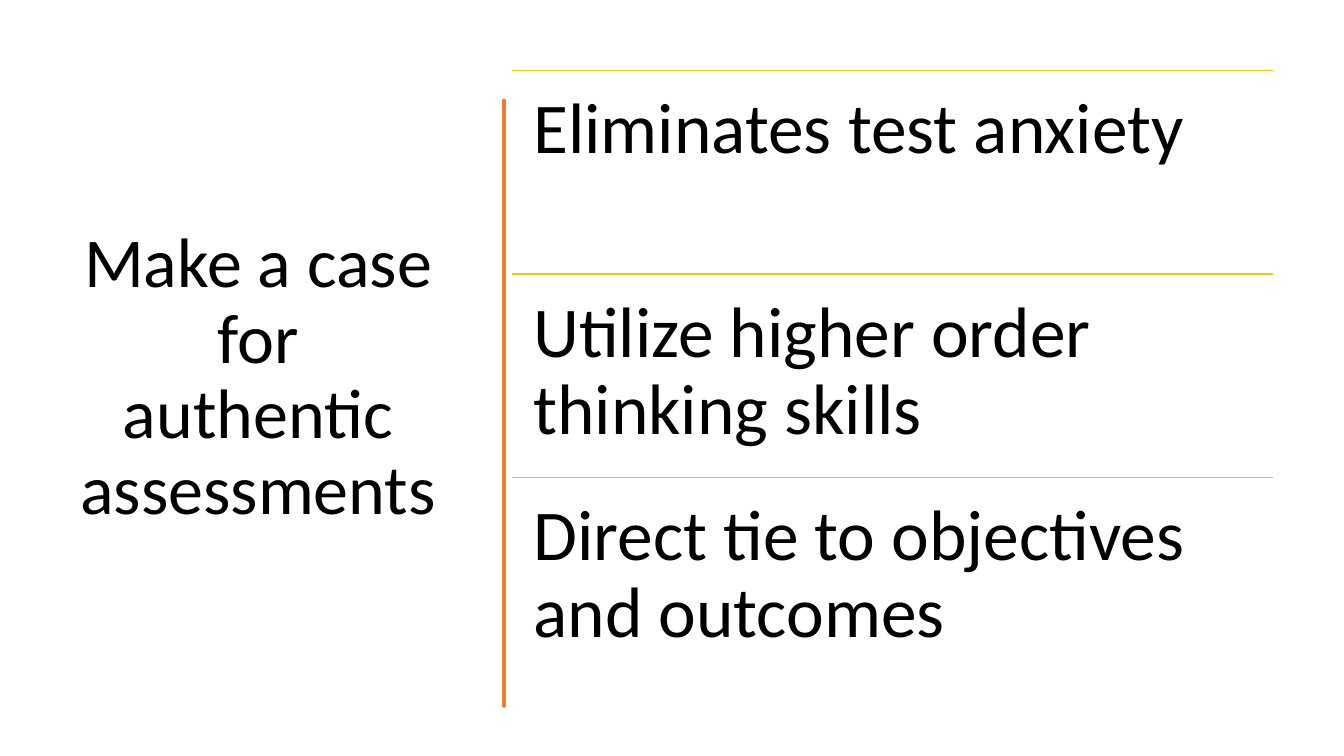
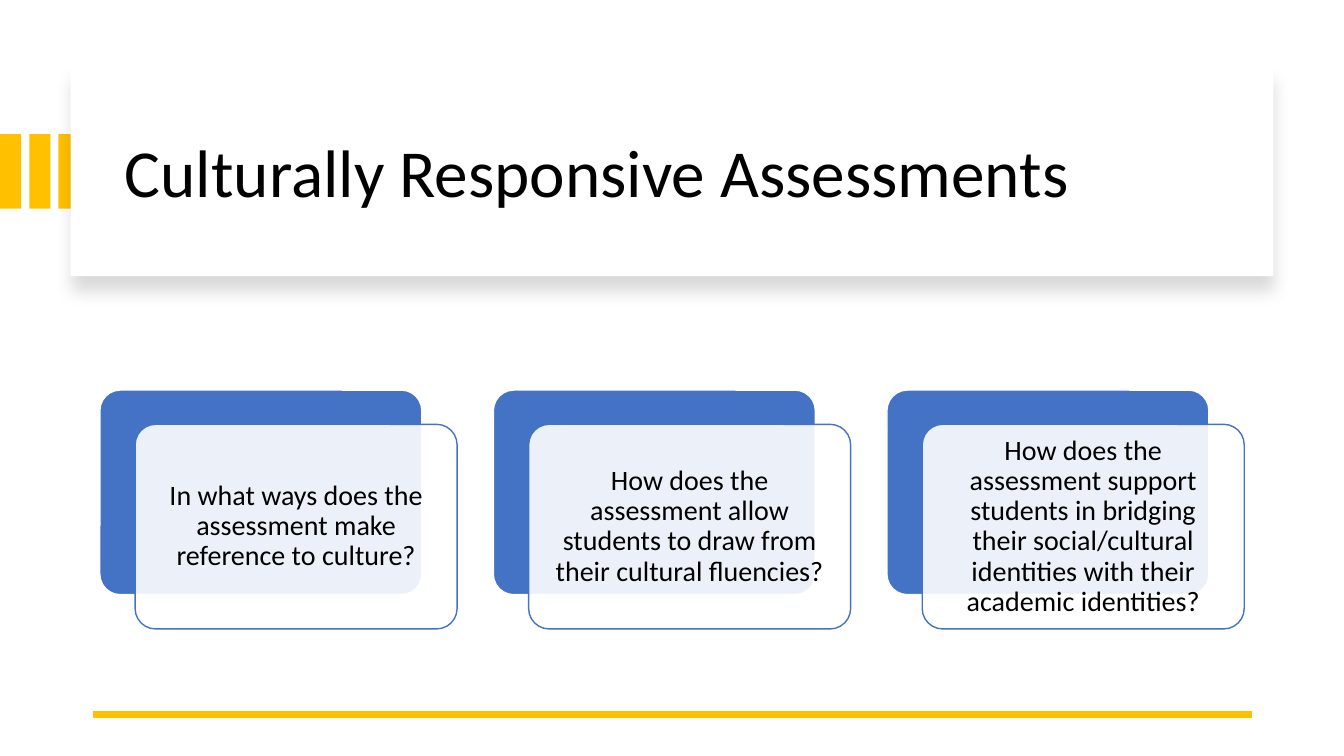
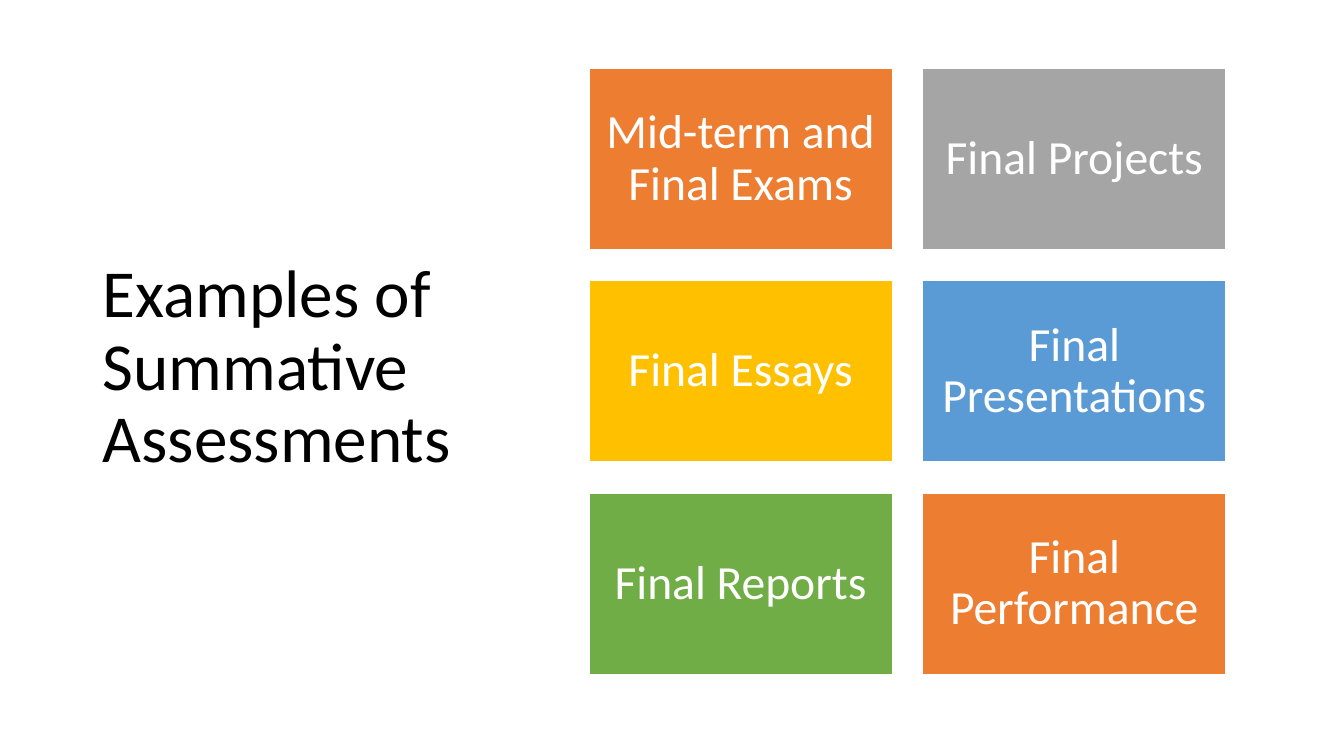
from math import sin
from lxml.etree import SubElement
from pptx import Presentation
from pptx.dml.color import RGBColor
from pptx.enum.shapes import MSO_CONNECTOR as Connector, MSO_SHAPE as Shape
from pptx.enum.text import MSO_ANCHOR as Anchor, PP_ALIGN as Align
from pptx.oxml.ns import qn
from pptx.util import Inches, Pt

FONT = "Calibri"
COLORS = {
    "black": "000000", "white": "FFFFFF", "orange": "ED7D31", "gray": "A5A5A5",
    "gold": "FFC000", "sky": "5B9BD5", "green": "70AD47", "blue": "4472C4",
}


def color(name):
    return RGBColor.from_string(COLORS[name])


def write(shape, text, size, ink="black", align=Align.LEFT, anchor=Anchor.MIDDLE,
          margins=(0.1, 0.05)):
    """Put one styled paragraph into a shape or text box."""
    frame = shape.text_frame
    frame.text = text
    frame.word_wrap = True
    frame.vertical_anchor = anchor
    frame.margin_left = frame.margin_right = Inches(margins[0])
    frame.margin_top = frame.margin_bottom = Inches(margins[1])
    para = frame.paragraphs[0]
    para.alignment = align
    para.line_spacing = 0.9
    font = para.runs[0].font
    font.name, font.size = FONT, Pt(size)
    font.color.rgb = color(ink)


def add_text(page, box, text, size, **style):
    write(page.shapes.add_textbox(*map(Inches, box)), text, size, **style)


def add_title(page, box, text, size=48, align=Align.LEFT):
    add_text(page, box, text, size, align=align)


def paint(shape, fill, line=None, width=1):
    shape.shadow.inherit = False
    shape.fill.solid()
    shape.fill.fore_color.rgb = color(fill)
    if line:
        shape.line.color.rgb = color(line)
        shape.line.width = Pt(width)
    else:
        shape.line.fill.background()


def add_block(page, box, fill, line=None, kind=Shape.RECTANGLE):
    block = page.shapes.add_shape(kind, *map(Inches, box))
    if kind == Shape.ROUNDED_RECTANGLE:
        block.adjustments[0] = 0.1
    paint(block, fill, line)
    return block


def add_rule(page, left, top, width, weight):
    rule = page.shapes.add_connector(
        Connector.STRAIGHT, *map(Inches, (left, top, left + width, top)))
    rule.line.color.rgb = color("gold")
    rule.line.width = Pt(weight)
    SubElement(rule.element.spPr, qn("a:effectLst"))


def set_alpha(shape, percent):
    fill = shape.element.spPr.find(qn("a:solidFill"))
    SubElement(fill[0], qn("a:alpha"), val=str(percent * 1000))


def add_soft_shadow(shape):
    effects = shape.element.spPr.find(qn("a:effectLst"))
    shadow = SubElement(effects, qn("a:outerShdw"), blurRad=str(Pt(11)),
                        dist=str(Pt(10)), dir="5400000", algn="t", rotWithShape="0")
    ink = SubElement(shadow, qn("a:srgbClr"), val=COLORS["black"])
    SubElement(ink, qn("a:alpha"), val="15000")


def add_brush_stroke(page, box):
    """Hand-drawn vertical divider with gently wavering edges."""
    left, top, width, height = box
    steps = 60
    levels = [top + height * step / steps for step in range(steps + 1)]
    right_edge = [(left + width + 0.01 * sin(5 * y), y) for y in levels]
    left_edge = [(left + 0.01 * sin(4 * y + 1), y) for y in reversed(levels)]
    start, *rest = right_edge + left_edge
    builder = page.shapes.build_freeform(*start, scale=Inches(1))
    builder.add_line_segments(rest, close=True)
    paint(builder.convert_to_shape(), "orange", "orange", 3.25)


def add_ruled_list(page, box, items):
    left, top, width, height = box
    row = height / len(items)
    for index, text in enumerate(items):
        y = top + index * row
        add_rule(page, left, y, width, 1)
        add_text(page, (left, y, width, row), text, 51, anchor=Anchor.TOP,
                 margins=(0.21, 0.21))


def add_banner(page, box, text):
    left, top, width, height = box
    # Gold bars running in from the slide edge
    for index in range(3):
        add_block(page, (index * 0.29, top + 0.66, 0.21, 0.74), "gold")
    add_soft_shadow(add_block(page, box, "white"))
    add_title(page, (left + 0.44, top + 0.22, width - 0.8, height - 0.37), text)


def add_cards(page, box, questions):
    left, top, width, height = box
    shift_x, shift_y, gap = 0.35, 0.34, 0.36
    pitch = (width + gap) / len(questions)
    card_width, card_height = pitch - gap - shift_x, height - shift_y
    for index, question in enumerate(questions):
        x = left + index * pitch
        add_block(page, (x, top, card_width, card_height), "blue", "white",
                  Shape.ROUNDED_RECTANGLE)
        card = add_block(page, (x + shift_x, top + shift_y, card_width, card_height),
                         "white", "blue", Shape.ROUNDED_RECTANGLE)
        set_alpha(card, 90)
        write(card, question, 20, align=Align.CENTER, margins=(0.12, 0.12))


def add_tiles(page, box, tiles, columns=2):
    left, top, width, height = box
    tile_width, tile_height = 3.01, 1.8
    rows = len(tiles) // columns
    pitch_x = (width - tile_width) / (columns - 1)
    pitch_y = (height - tile_height) / (rows - 1)
    for index, (text, fill) in enumerate(tiles):
        row, column = divmod(index, columns)
        tile = add_block(page, (left + column * pitch_x, top + row * pitch_y,
                                tile_width, tile_height), fill, "white")
        write(tile, text, 34, "white", Align.CENTER, margins=(0.14, 0.14))


def build_case(page):
    add_title(page, (0.69, 0.7, 3.74, 6.11), "Make a case for authentic assessments",
              50, Align.CENTER)
    add_brush_stroke(page, (4.73, 0.84, 0.02, 5.92))
    add_ruled_list(page, (5.08, 0.7, 7.55, 6.06), [
        "Eliminates test anxiety",
        "Utilize higher order thinking skills",
        "Direct tie to objectives and outcomes",
    ])


def build_culture(page):
    add_banner(page, (0.7, 0.67, 11.93, 2.07), "Culturally Responsive Assessments")
    add_rule(page, 0.92, 7.09, 11.5, 4.5)
    add_cards(page, (0.99, 3.87, 11.35, 2.37), [
        "In what ways does the assessment make reference to culture?",
        "How does the assessment allow students to draw from their cultural fluencies?",
        "How does the assessment support students in bridging their social/cultural "
        "identities with their academic identities?",
    ])


def build_examples(page):
    add_title(page, (0.92, 0.61, 3.69, 6.09), "Examples of Summative Assessments")
    add_tiles(page, (5.84, 0.68, 6.32, 6.01), [
        ("Mid-term and Final Exams", "orange"), ("Final Projects", "gray"),
        ("Final Essays", "gold"), ("Final Presentations", "sky"),
        ("Final Reports", "green"), ("Final Performance", "orange"),
    ])


def main():
    deck = Presentation()
    deck.slide_width, deck.slide_height = Inches(13.33), Inches(7.5)
    for build in (build_case, build_culture, build_examples):
        build(deck.slides.add_slide(deck.slide_layouts[6]))
    deck.save("out.pptx")


if __name__ == "__main__":
    main()
